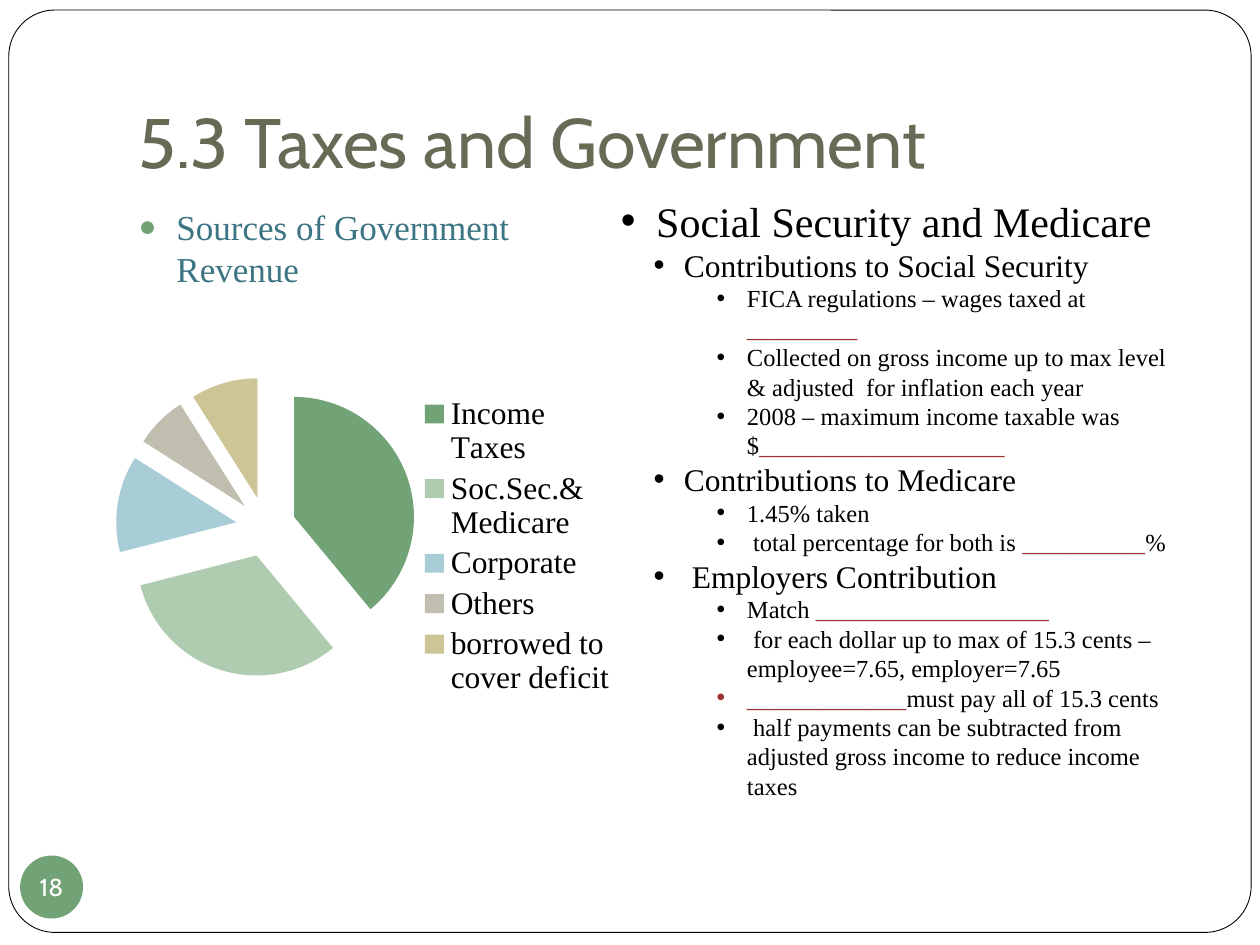
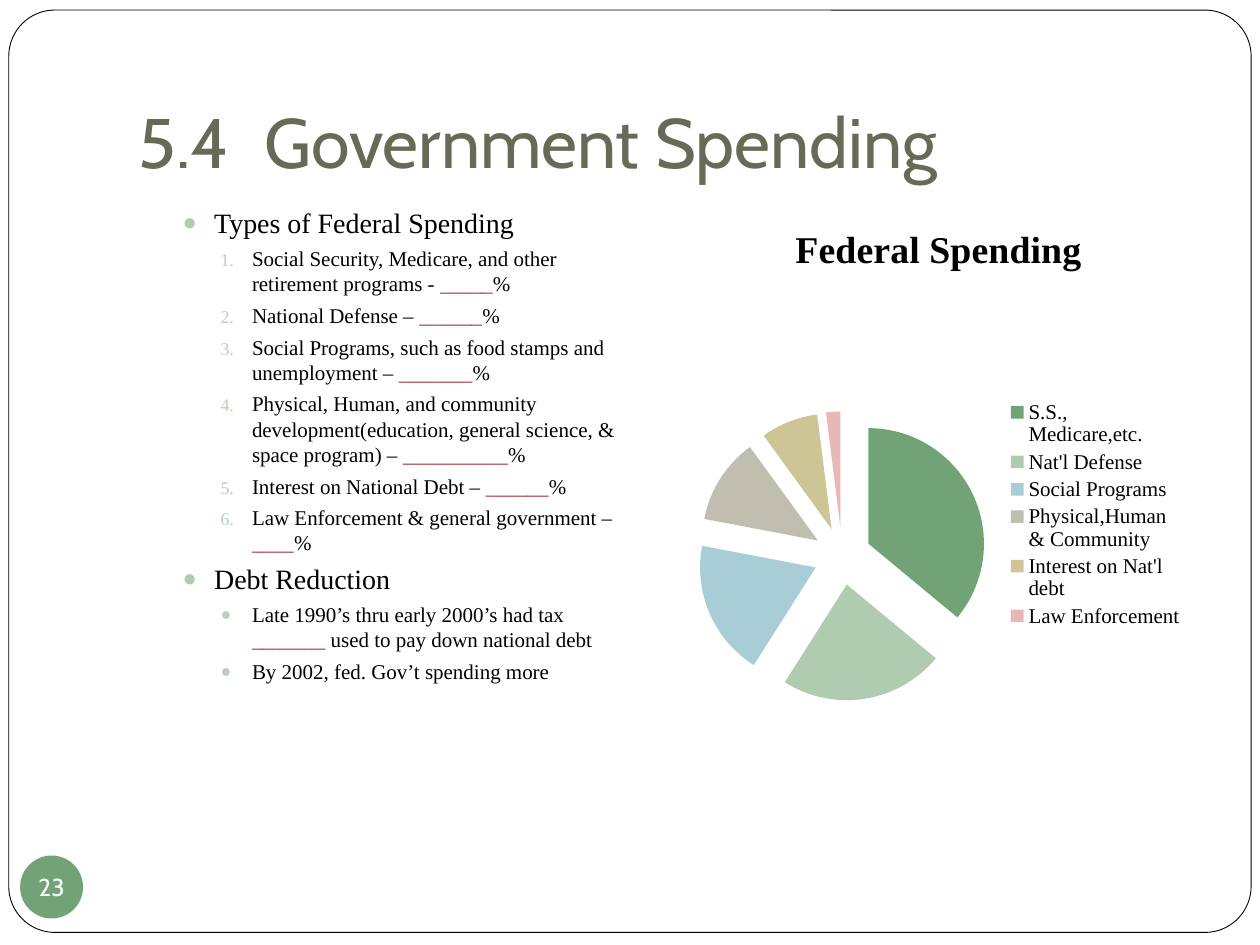
from dataclasses import dataclass

from pptx import Presentation
from pptx.chart.data import CategoryChartData
from pptx.dml.color import RGBColor as Rgb
from pptx.enum.chart import XL_CHART_TYPE as ChartType, XL_LEGEND_POSITION as LegendSide
from pptx.enum.shapes import MSO_SHAPE as Preset
from pptx.enum.text import MSO_ANCHOR as Anchor, MSO_AUTO_SIZE as AutoSize, PP_ALIGN as Align
from pptx.oxml import parse_xml
from pptx.oxml.ns import nsdecls
from pptx.oxml.xmlchemy import OxmlElement
from pptx.util import Pt

PX = 9144


@dataclass(frozen=True)
class Theme:
    """Colours, fonts and type sizes of the deck."""
    heading_font: str = "Cabin"
    text_font: str = "Times New Roman"
    paper: str = "FFFFFF"
    ink: str = "000000"
    heading: str = "676A55"
    accent: str = "72A376"
    pale: str = "B0CCB0"
    faint: str = "BCCEBD"
    teal: str = "3C7483"
    blank: str = "9D3232"
    slices: tuple = ("72A376", "B0CCB0", "A8CDD7", "C0BEAF", "CEC597", "E8B7B7")
    title_size: float = 40
    number_size: float = 14
    chart_size: float = 18
    chart_title_size: float = 21.6


@dataclass(frozen=True)
class Level:
    """Look of one list level, with indents in px."""
    depth: int
    size: float
    margin: int
    hang: int
    color: str = Theme.ink
    bullet: str = "•"
    bullet_color: str = ""
    before: float = 0


SOURCE = Level(0, 20, 30, 30, Theme.teal, "●", Theme.accent, 5.8)
TOPIC = Level(0, 24, 28, 28)
PART = Level(1, 18, 50, 24)
DETAIL = Level(2, 14, 100, 24)
KIND = Level(1, 16, 60, 25, bullet="●", bullet_color=Theme.pale, before=3.7)
ITEM = Level(2, 12, 90, 25, bullet="1.", bullet_color=Theme.faint, before=3.7)
NOTE = Level(2, 12, 90, 25, bullet="●", bullet_color=Theme.faint, before=3.7)

LEFT_COLUMN = (100, 158, 410, 500)
RIGHT_COLUMN = (540, 158, 410, 500)


def px(*lengths):
    """Turn px lengths into EMU."""
    return [length * PX for length in lengths]


def element(tag, **attributes):
    """Make an XML element with attributes."""
    node = OxmlElement(tag)
    for key, value in attributes.items():
        node.set(key, str(value))
    return node


class Deck:
    """Holds the theme and the current slide."""

    def __init__(self, theme):
        self.theme = theme
        self.show = Presentation()
        self.show.slide_width, self.show.slide_height = px(1000, 750)
        self.layout = self.show.slide_layouts[1]
        self.slide = None

    def start(self, title, number):
        """Add a slide with its title and page number."""
        first = self.slide is None
        self.slide = self.show.slides.add_slide(self.layout)
        if first:
            self.frame()
        heading = self.slide.shapes.title
        self.place(heading, (100, 30, 850, 125))
        frame = heading.text_frame
        frame.auto_size = AutoSize.NONE
        frame.vertical_anchor = Anchor.BOTTOM
        frame.margin_bottom = 10 * PX
        frame.paragraphs[0].alignment = Align.LEFT
        self.run(frame.paragraphs[0], title, self.theme.title_size,
                 self.theme.heading, self.theme.heading_font)
        self.page_number(number)

    def place(self, shape, box):
        """Move a shape to a box in px."""
        shape.left, shape.top, shape.width, shape.height = px(*box)

    def shape(self, preset, box, fill):
        """Add a flat preset shape without a line."""
        shape = self.slide.shapes.add_shape(preset, *px(*box))
        shape.shadow.inherit = False
        shape.fill.solid()
        shape.fill.fore_color.rgb = Rgb.from_string(fill)
        shape.line.fill.background()
        return shape

    def frame(self):
        """Put the rounded border on the shared layout."""
        border = self.shape(Preset.ROUNDED_RECTANGLE, (7, 8, 986, 732), self.theme.paper)
        border.adjustments[0] = 0.05
        border.line.color.rgb = Rgb.from_string(self.theme.ink)
        border.line.width = Pt(0.5)
        border.element.nvSpPr.cNvPr.id = 20
        self.layout.shapes.element.insert(2, border.element)

    def page_number(self, number):
        """Add the round page number badge."""
        badge = self.shape(Preset.OVAL, (16, 679, 50, 50), self.theme.accent)
        frame = badge.text_frame
        frame.margin_left = frame.margin_right = frame.margin_top = frame.margin_bottom = 0
        frame.word_wrap = False
        frame.vertical_anchor = Anchor.MIDDLE
        frame.paragraphs[0].alignment = Align.CENTER
        self.run(frame.paragraphs[0], number, self.theme.number_size,
                 self.theme.paper, self.theme.heading_font)

    def run(self, paragraph, text, size, color, font):
        """Add one formatted run."""
        run = paragraph.add_run()
        run.text = text
        self.style(run.font, size, color, font)

    def style(self, font, size, color, name):
        """Set size, colour and face of a font."""
        font.size, font.name = Pt(size), name
        font.color.rgb = Rgb.from_string(color)

    def body(self, entries):
        """Fill the body placeholder with a list."""
        holder = self.slide.placeholders[1]
        self.place(holder, LEFT_COLUMN)
        self.fill_list(holder.text_frame, entries)

    def text_box(self, box, entries):
        """Add a text box with a list."""
        self.fill_list(self.slide.shapes.add_textbox(*px(*box)).text_frame, entries)

    def fill_list(self, frame, entries):
        """Set list entries, colouring the blanks to fill in."""
        frame.word_wrap = True
        frame.auto_size = AutoSize.NONE
        for index, (level, *texts) in enumerate(entries):
            paragraph = frame.add_paragraph() if index else frame.paragraphs[0]
            self.bullet(paragraph, level)
            for text in texts:
                color = self.theme.blank if text.startswith("_") else level.color
                self.run(paragraph, text, level.size, color, self.theme.text_font)

    def bullet(self, paragraph, level):
        """Set indents, spacing and bullet of a paragraph."""
        paragraph.level = level.depth
        paragraph.space_before = Pt(level.before)
        properties = paragraph._p.get_or_add_pPr()
        properties.set("marL", str(level.margin * PX))
        properties.set("indent", str(-level.hang * PX))
        if level.bullet_color:
            tint = element("a:buClr")
            tint.append(element("a:srgbClr", val=level.bullet_color))
            properties.append(tint)
            properties.append(element("a:buSzPct", val=85000))
        if level.bullet == "1.":
            properties.append(element("a:buAutoNum", type="arabicPeriod"))
        else:
            properties.append(element("a:buFont", typeface="Arial"))
            properties.append(element("a:buChar", char=level.bullet))

    def pie(self, box, name, shares, legend_size, title=None, plot=None):
        """Add an exploded pie chart with a legend."""
        theme = self.theme
        data = CategoryChartData()
        data.categories = list(shares)
        data.add_series(name, list(shares.values()))
        chart = self.slide.shapes.add_chart(ChartType.PIE, *px(*box), data).chart
        self.style(chart.font, theme.chart_size, theme.ink, theme.text_font)
        chart.has_title = bool(title)
        if title:
            heading = chart.chart_title.text_frame.paragraphs[0]
            self.run(heading, title, theme.chart_title_size, theme.ink, theme.text_font)
            heading.runs[0].font.bold = True
        chart.has_legend = True
        chart.legend.position = LegendSide.RIGHT
        chart.legend.include_in_layout = False
        self.style(chart.legend.font, legend_size, theme.ink, theme.text_font)
        pie = chart.plots[0]
        pie.vary_by_categories = True
        series = pie.series[0]
        for index, color in enumerate(theme.slices[:len(shares)]):
            fill = series.points[index].format.fill
            fill.solid()
            fill.fore_color.rgb = Rgb.from_string(color)
        first_slice = series._element.xpath("c:dPt")[0]
        first_slice.addprevious(element("c:explosion", val=25))
        if plot:
            self.plot_layout(chart, plot)

    def plot_layout(self, chart, plot):
        """Fix the inner plot area as fractions of the chart."""
        area = chart._chartSpace.xpath("c:chart/c:plotArea")[0]
        for automatic in area.xpath("c:layout"):
            area.remove(automatic)
        settings = [("layoutTarget", "inner"), ("xMode", "edge"), ("yMode", "edge"),
                    *zip("xywh", plot)]
        parts = "".join(f'<c:{tag} val="{value}"/>' for tag, value in settings)
        area.insert(0, parse_xml(f'<c:layout {nsdecls("c")}><c:manualLayout>{parts}'
                                 '</c:manualLayout></c:layout>'))


def taxes(deck):
    """Build the slide on taxes."""
    deck.start("5.3 Taxes and Government", "18")
    deck.body([(SOURCE, "Sources of Government Revenue")])
    revenue = {"Income Taxes": 39, "Soc.Sec.&Medicare": 32, "Corporate": 13,
               "Others": 7, "borrowed to cover deficit": 9}
    deck.pie((75, 217, 425, 433), "Series 1", revenue, 18, plot=(0.04, 0, 0.56, 0.93))
    deck.text_box((483, 150, 458, 451), [
        (TOPIC, "Social Security and Medicare"),
        (PART, "Contributions to Social Security"),
        (DETAIL, "FICA regulations – wages taxed at ", "_________"),
        (DETAIL, "Collected on gross income up to max level & adjusted  for inflation each year"),
        (DETAIL, "2008 – maximum income taxable was $", "____________________"),
        (PART, "Contributions to Medicare"),
        (DETAIL, "1.45% taken"),
        (DETAIL, " total percentage for both is ", "__________", "%"),
        (PART, " Employers Contribution"),
        (DETAIL, "Match ", "___________________"),
        (DETAIL, " for each dollar up to max of 15.3 cents – employee=7.65, employer=7.65"),
        (DETAIL, "_____________", "must pay all of 15.3 cents"),
        (DETAIL, " half payments can be subtracted from adjusted gross income "
                 "to reduce income taxes"),
    ])


def spending(deck):
    """Build the slide on spending."""
    deck.start("5.4\tGovernment Spending", "23")
    deck.body([
        (KIND, "Types of Federal Spending"),
        (ITEM, "Social Security, Medicare, and other retirement programs - ", "_____", "%"),
        (ITEM, "National Defense – ", "______", "%"),
        (ITEM, "Social Programs, such as food stamps and unemployment – ", "_______", "%"),
        (ITEM, "Physical, Human, and community development(education, general science, "
               "& space program) – ", "__________", "%"),
        (ITEM, "Interest on National Debt – ", "______", "%"),
        (ITEM, "Law Enforcement & general government – ", "____", "%"),
        (KIND, "Debt Reduction"),
        (NOTE, "Late 1990’s thru early 2000’s had tax ", "_______",
         " used to pay down national debt"),
        (NOTE, "By 2002, fed. Gov’t spending more"),
    ])
    budget = {"S.S., Medicare,etc.": 36, "Nat'l Defense": 23, "Social Programs": 19,
              "Physical,Human & Community": 12, "Interest on Nat'l debt": 8,
              "Law Enforcement": 2}
    deck.pie(RIGHT_COLUMN, "Federal Spending", budget, 12, title="Federal Spending")


def main():
    """Build and save the deck."""
    deck = Deck(Theme())
    taxes(deck)
    spending(deck)
    deck.show.save("out.pptx")


if __name__ == "__main__":
    main()
